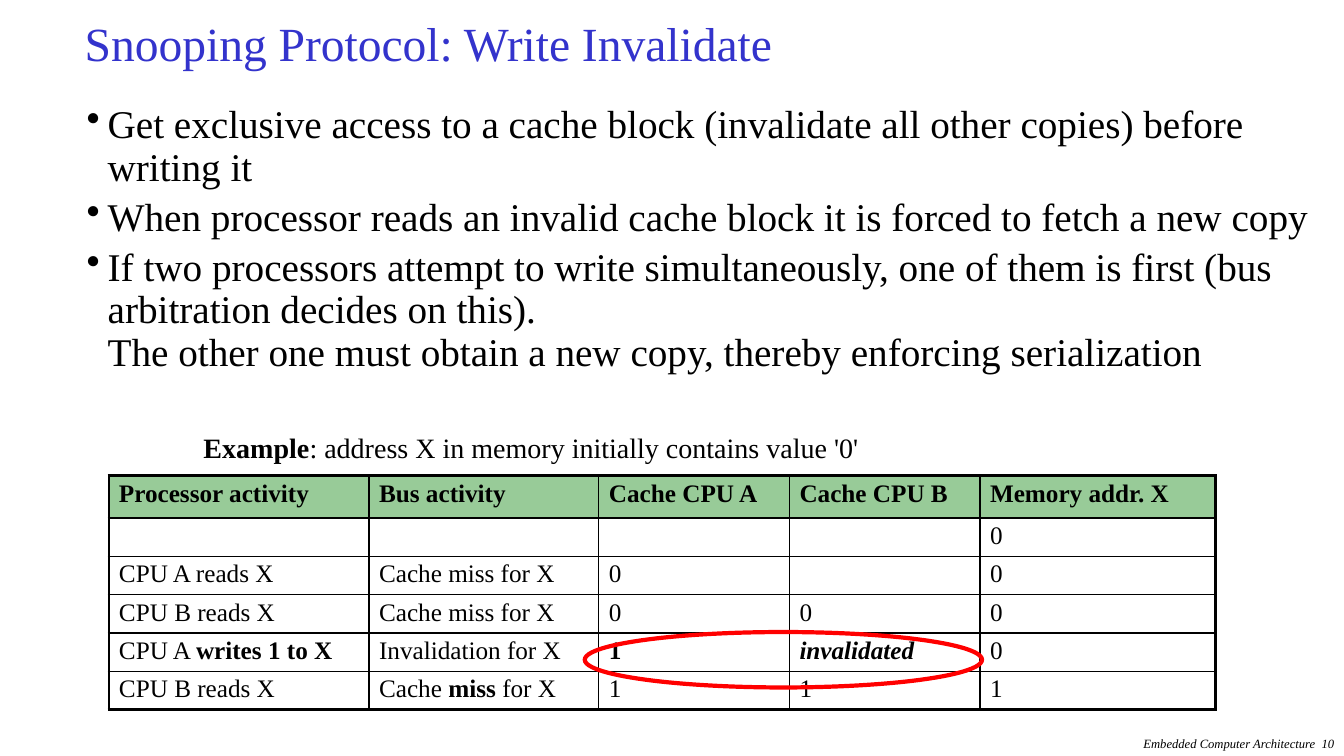
from dataclasses import dataclass

from lxml.etree import SubElement
from pptx import Presentation
from pptx.dml.color import RGBColor
from pptx.enum.shapes import MSO_SHAPE
from pptx.enum.text import MSO_ANCHOR, PP_ALIGN
from pptx.oxml.ns import qn
from pptx.util import Inches, Pt


@dataclass(frozen=True)
class Theme:
    font: str = "Times New Roman"
    title: str = "3333CC"
    ink: str = "000000"
    header: str = "339933"
    mark: str = "FF0000"
    title_size: int = 34
    body_size: int = 28
    example_size: int = 20
    table_size: int = 18
    footer_size: int = 9
    outer_line: float = 2.25
    inner_line: float = 1
    mark_line: float = 3


@dataclass(frozen=True)
class Span:
    text: str
    bold: bool = False
    italic: bool = False


@dataclass(frozen=True)
class Box:
    left: float
    top: float
    width: float
    height: float

    def emu(self) -> tuple:
        return tuple(Inches(v) for v in (self.left, self.top, self.width, self.height))


THEME = Theme()

BULLETS = (
    "Get exclusive access to a cache block (invalidate all other copies) before writing it",
    "When processor reads an invalid cache block it is forced to fetch a new copy",
    "If two processors attempt to write simultaneously, one of them is first "
    "(bus arbitration decides on this). \v"
    "The other one must obtain a new copy, thereby enforcing serialization",
)

HEADERS = ("Processor activity", "Bus activity", "Cache CPU A", "Cache CPU B", "Memory addr. X")
ROWS = (
    tuple((Span(name, bold=True),) for name in HEADERS),
    ("", "", "", "", "0"),
    ("CPU A reads X", "Cache miss for X", "0", "", "0"),
    ("CPU B reads X", "Cache miss for X", "0", "0", "0"),
    (
        (Span("CPU A "), Span("writes 1 to X", bold=True)),
        "Invalidation for X",
        (Span("1", bold=True),),
        (Span("invalidated", bold=True, italic=True),),
        "0",
    ),
    (
        "CPU B reads X",
        (Span("Cache "), Span("miss", bold=True), Span(" for X")),
        "1", "1", "1",
    ),
)
COL_WIDTHS = (2.58, 2.28, 1.89, 1.89, 2.34)
HEADER_HEIGHT, ROW_HEIGHT = 0.42, 0.38


def write(p, text, *, size: float, color: str = THEME.ink, align=None,
          line_spacing: float | None = None, space_before: float | None = None) -> None:
    spans = (Span(text),) if isinstance(text, str) else text
    p.alignment = align
    p.line_spacing = line_spacing
    if space_before is not None:
        p.space_before = Pt(space_before)
    for span in spans:
        for i, line in enumerate(span.text.split("\v")):
            if i:
                p.add_line_break()
            if not line:
                continue
            r = p.add_run()
            r.text = line
            r.font.name = THEME.font
            r.font.size = Pt(size)
            r.font.bold = span.bold
            r.font.italic = span.italic
            r.font.color.rgb = RGBColor.from_string(color)


def add_text_frame(s, box: Box, wrap: bool = True):
    tf = s.shapes.add_textbox(*box.emu()).text_frame
    tf.word_wrap = wrap
    return tf


def add_title(s, box: Box, text: str) -> None:
    sp = s.shapes.title
    sp.left, sp.top, sp.width, sp.height = box.emu()
    tf = sp.text_frame
    tf.vertical_anchor = MSO_ANCHOR.MIDDLE
    write(tf.paragraphs[0], text, size=THEME.title_size, color=THEME.title,
          align=PP_ALIGN.LEFT, line_spacing=0.8)


def add_bullets(s, box: Box) -> None:
    tf = add_text_frame(s, box)
    for i, text in enumerate(BULLETS):
        p = tf.add_paragraph() if i else tf.paragraphs[0]
        write(p, text, size=THEME.body_size, line_spacing=0.9,
              space_before=THEME.body_size * 0.2)
        pPr = p._p.get_or_add_pPr()
        pPr.set("marL", str(Inches(0.21)))
        pPr.set("indent", str(-Inches(0.21)))
        SubElement(pPr, qn("a:buChar"), char="•")


def set_borders(cell, widths: dict[str, float]) -> None:
    tcPr = cell._tc.get_or_add_tcPr()
    for side, width in widths.items():
        ln = SubElement(tcPr, qn(f"a:ln{side}"), w=str(Pt(width)))
        fill = SubElement(ln, qn("a:solidFill"))
        SubElement(fill, qn("a:srgbClr"), val=THEME.ink)


def fill_header(cell) -> None:
    cell.fill.solid()
    cell.fill.fore_color.rgb = RGBColor.from_string(THEME.header)
    color = cell._tc.tcPr.find(qn("a:solidFill")).find(qn("a:srgbClr"))
    SubElement(color, qn("a:alpha"), val="50000")


def add_activity_table(s, left: float, top: float) -> None:
    heights = [HEADER_HEIGHT] + [ROW_HEIGHT] * (len(ROWS) - 1)
    box = Box(left, top, sum(COL_WIDTHS), sum(heights))
    table = s.shapes.add_table(len(ROWS), len(COL_WIDTHS), *box.emu()).table
    table.first_row = table.horz_banding = False
    for col, width in zip(table.columns, COL_WIDTHS):
        col.width = Inches(width)
    last_row, last_col = len(ROWS) - 1, len(COL_WIDTHS) - 1
    for i, (values, height) in enumerate(zip(ROWS, heights)):
        table.rows[i].height = Inches(height)
        for j, value in enumerate(values):
            cell = table.cell(i, j)
            cell.margin_top = cell.margin_bottom = Inches(0.04)
            write(cell.text_frame.paragraphs[0], value, size=THEME.table_size)
            edges = {"L": j == 0, "R": j == last_col, "T": i == 0, "B": i == last_row}
            set_borders(cell, {side: THEME.outer_line if outer else THEME.inner_line
                               for side, outer in edges.items()})
            if i == 0:
                fill_header(cell)
            else:
                cell.fill.background()


def add_mark(s, box: Box) -> None:
    sp = s.shapes.add_shape(MSO_SHAPE.OVAL, *box.emu())
    sp.shadow.inherit = False
    sp.fill.background()
    sp.line.color.rgb = RGBColor.from_string(THEME.mark)
    sp.line.width = Pt(THEME.mark_line)


def main() -> None:
    prs = Presentation()
    prs.slide_width, prs.slide_height = Inches(13.33), Inches(7.5)
    s = prs.slides.add_slide(prs.slide_layouts[5])

    footer = add_text_frame(s, Box(9.5, 7.25, 3.83, 0.25))
    write(footer.paragraphs[0], (Span("Embedded Computer Architecture  10", italic=True),),
          size=THEME.footer_size, align=PP_ALIGN.RIGHT)
    add_title(s, Box(0.74, 0.13, 12.09, 0.69), "Snooping Protocol: Write Invalidate")
    add_bullets(s, Box(0.76, 0.99, 12.52, 3.31))
    add_activity_table(s, 1.08, 4.72)
    example = add_text_frame(s, Box(1.92, 4.22, 6.74, 0.44), wrap=False)
    write(example.paragraphs[0],
          (Span("Example", bold=True), Span(": address X in memory initially contains value '0'")),
          size=THEME.example_size)
    add_mark(s, Box(5.8, 6.27, 3.94, 0.55))

    prs.save("out.pptx")


if __name__ == "__main__":
    main()
